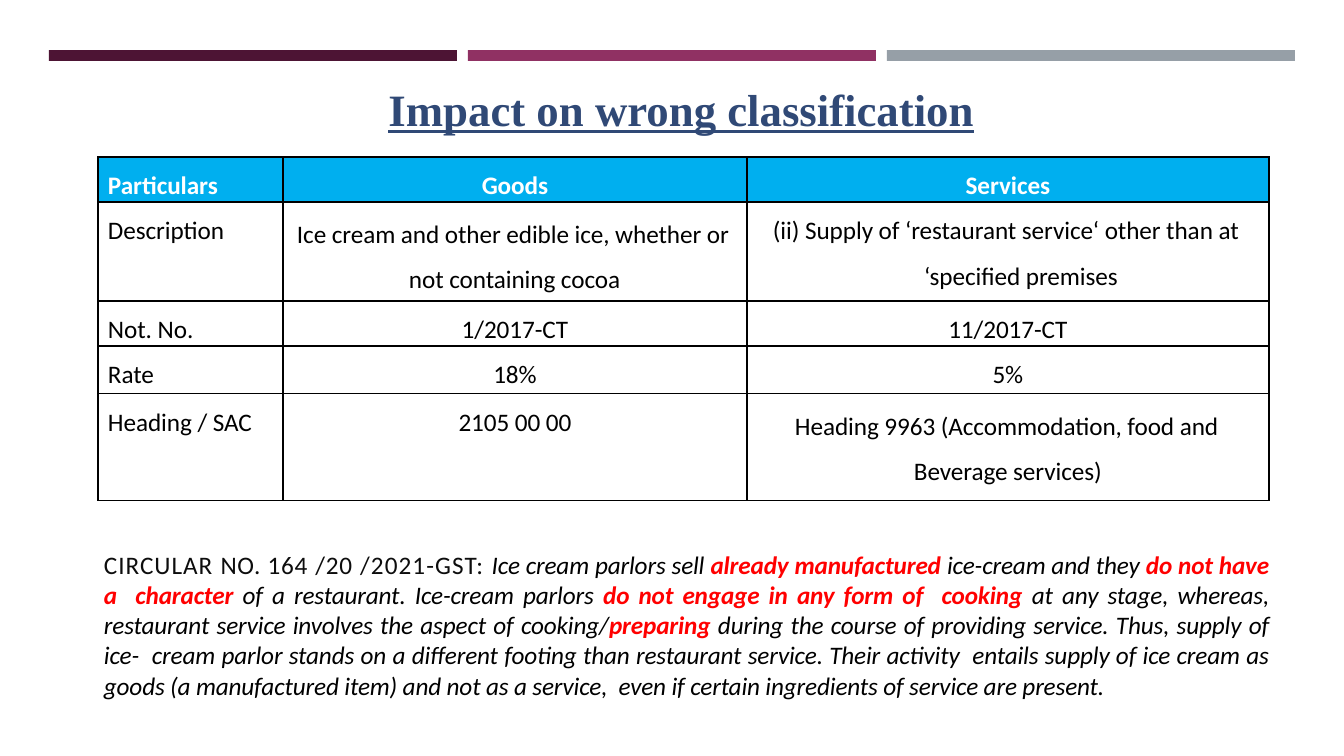
from lxml import etree
from pptx import Presentation
from pptx.dml.color import RGBColor
from pptx.enum.shapes import MSO_SHAPE as Preset
from pptx.enum.text import MSO_ANCHOR as Anchor, PP_ALIGN as Align
from pptx.oxml.ns import qn
from pptx.util import Pt

EMU_PER_PX = 9071
COLORS = {
    "plum": "4D1434", "berry": "903163", "grey": "969FA7",
    "navy": "304976", "sky": "00AFEF", "white": "FFFFFF",
    "black": "000000", "ink": "0D0D0D", "red": "FF0000",
}
BASE = {"name": "Calibri", "size": Pt(18)}
STYLES = {
    "title": {"name": "Times New Roman", "size": Pt(32), "bold": True,
              "underline": True, "color": "navy"},
    "header": {**BASE, "bold": True, "color": "white"},
    "cell": {**BASE, "bold": False, "color": "black"},
    "circular": {**BASE, "color": "ink"},
    "quote": {**BASE, "italic": True, "color": "black"},
    "stress": {**BASE, "italic": True, "bold": True, "color": "red"},
}
LABEL = {"indent": (10, 0)}
CENTERED = {"alignment": Align.CENTER}
EXACT = {"line_spacing": Pt(32.4), "space_before": Pt(2.1)}

# Each cell is a list of (text, layout) paragraphs.
ROWS = [
    [[("Particulars", LABEL)], [("Goods", CENTERED)], [("Services", CENTERED)]],
    [[("Description", LABEL)],
     [("Ice cream and other edible ice, whether or not containing cocoa",
       {**EXACT, "indent": (126, -112)})],
     [("(ii) Supply of ‘restaurant service‘ other than at", {"indent": (26, 0)}),
      ("‘specified premises",
       {**CENTERED, "indent": (26, 0), "space_before": Pt(10.8)})]],
    [[("Not. No.", LABEL)], [("1/2017-CT", CENTERED)], [("11/2017-CT", CENTERED)]],
    [[("Rate", LABEL)], [("18%", CENTERED)], [("5%", CENTERED)]],
    [[("Heading / SAC", LABEL)], [("2105 00 00", CENTERED)],
     [("Heading 9963 (Accommodation, food and Beverage services)",
       {**EXACT, "indent": (167, -119)})]],
]
COLUMN_WIDTHS = [185, 464, 522]
ROW_HEIGHTS = [45, 99, 45, 48, 107]

# Runs of the circular: text, style, letter spacing in hundredths of a point.
CIRCULAR = [
    ("CIRCULAR ", "circular", 70),
    ("NO. ", "circular", 30),
    ("164 /20 ", "circular", 60),
    ("/2021-GST: ", "circular", 80),
    ("Ice cream parlors sell ", "quote", -10),
    ("already manufactured ", "stress", -10),
    ("ice-cream and they ", "quote", -10),
    ("do not have a  character ", "stress", -10),
    ("of a restaurant. Ice-cream parlors ", "quote", -10),
    ("do not engage in any form of  cooking ", "stress", -10),
    ("at any stage, whereas, restaurant service involves the aspect of cooking/",
     "quote", -10),
    ("preparing ", "stress", -10),
    ("during the course of providing service. Thus, supply of ice-  cream parlor "
     "stands on a different footing than restaurant service. Their activity  entails "
     "supply of ice cream as goods (a manufactured item) and not as a service,  even "
     "if certain ingredients of service are present.", "quote", -10),
]


def px(*lengths):
    return [length * EMU_PER_PX for length in lengths]


def rgb(color):
    return RGBColor.from_string(COLORS[color])


def add_run(paragraph, text, style, spacing=0):
    run = paragraph.add_run()
    run.text = text
    for attribute, value in STYLES[style].items():
        if attribute == "color":
            run.font.color.rgb = rgb(value)
        else:
            setattr(run.font, attribute, value)
    if spacing:
        run.font._element.set("spc", str(spacing))


def format_paragraph(paragraph, layout):
    """Apply a layout; indent is (left margin, first-line offset) in px."""
    for attribute, value in layout.items():
        if attribute == "indent":
            properties = paragraph._p.get_or_add_pPr()
            for name, length in zip(("marL", "indent"), px(*value)):
                properties.set(name, str(length))
        else:
            setattr(paragraph, attribute, value)


def add_bar(slide, left, color):
    bar = slide.shapes.add_shape(Preset.RECTANGLE, *px(left, 50, 408, 11))
    bar.shadow.inherit = False
    bar.fill.solid()
    bar.fill.fore_color.rgb = rgb(color)
    bar.line.fill.background()


def add_text(slide, box, runs, layout):
    frame = slide.shapes.add_textbox(*px(*box)).text_frame
    frame.word_wrap = True
    frame.vertical_anchor = Anchor.TOP
    paragraph = frame.paragraphs[0]
    format_paragraph(paragraph, layout)
    for run in runs:
        add_run(paragraph, *run)


def add_borders(cell):
    properties = cell._tc.get_or_add_tcPr()
    for position, side in enumerate(("lnL", "lnR", "lnT", "lnB")):
        line = etree.Element(qn(f"a:{side}"), w=str(Pt(1)))
        fill = etree.SubElement(line, qn("a:solidFill"))
        etree.SubElement(fill, qn("a:srgbClr"), val=COLORS["black"])
        properties.insert(position, line)


def fill_cell(cell, paragraphs, is_header):
    exact = "line_spacing" in paragraphs[0][1]
    margins = dict(zip(("left", "top", "right", "bottom"),
                       px(0, 3 if exact else 14, 0, 0)))
    for side, margin in margins.items():
        setattr(cell, f"margin_{side}", margin)
    if is_header:
        cell.fill.solid()
        cell.fill.fore_color.rgb = rgb("sky")
    else:
        cell.fill.background()
    add_borders(cell)
    frame = cell.text_frame
    for index, (text, layout) in enumerate(paragraphs):
        paragraph = frame.add_paragraph() if index else frame.paragraphs[0]
        format_paragraph(paragraph, {"space_before": Pt(10), **layout})
        add_run(paragraph, text, "header" if is_header else "cell", -5)


def add_comparison_table(slide):
    box = px(98, 157, sum(COLUMN_WIDTHS), sum(ROW_HEIGHTS))
    table = slide.shapes.add_table(len(ROWS), len(COLUMN_WIDTHS), *box).table
    table.first_row = table.horz_banding = False
    for column, width in zip(table.columns, px(*COLUMN_WIDTHS)):
        column.width = width
    for row, height in zip(table.rows, px(*ROW_HEIGHTS)):
        row.height = height
    for row_index, row in enumerate(ROWS):
        for column_index, paragraphs in enumerate(row):
            fill_cell(table.cell(row_index, column_index), paragraphs, row_index == 0)


def main():
    presentation = Presentation()
    presentation.slide_width, presentation.slide_height = px(1344, 756)
    slide = presentation.slides.add_slide(presentation.slide_layouts[6])
    for index, color in enumerate(("plum", "berry", "grey")):
        add_bar(slide, 49 + 419 * index, color)
    add_text(slide, (19, 83, 1325, 50), [("Impact on wrong classification", "title")],
             {**CENTERED, "line_spacing": 0.9})
    add_comparison_table(slide)
    add_text(slide, (94, 544, 1185, 163), CIRCULAR, {"alignment": Align.JUSTIFY})
    presentation.save("out.pptx")


if __name__ == "__main__":
    main()
